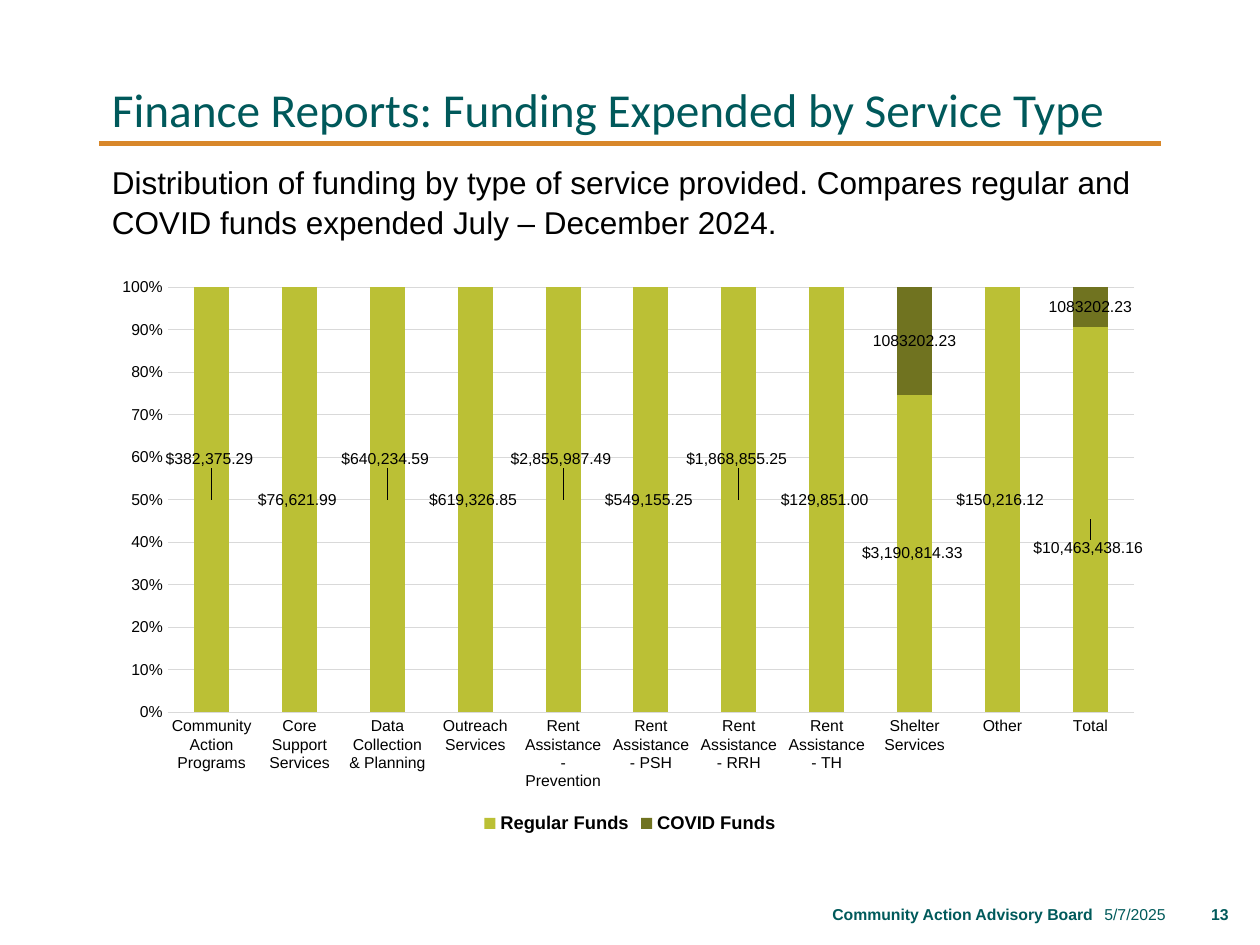
from lxml import etree
from pptx import Presentation
from pptx.chart.data import CategoryChartData
from pptx.dml.color import RGBColor
from pptx.enum.chart import XL_CHART_TYPE, XL_LABEL_POSITION, XL_LEGEND_POSITION, XL_TICK_MARK
from pptx.enum.shapes import MSO_CONNECTOR
from pptx.enum.text import MSO_ANCHOR, MSO_AUTO_SIZE, PP_ALIGN
from pptx.oxml import parse_xml
from pptx.oxml.ns import nsdecls, qn
from pptx.util import Cm, Pt

STACKED_100 = XL_CHART_TYPE.COLUMN_STACKED_100
CENTER_LABEL = XL_LABEL_POSITION.CENTER
LEGEND_BOTTOM = XL_LEGEND_POSITION.BOTTOM
NO_TICK = XL_TICK_MARK.NONE
STRAIGHT = MSO_CONNECTOR.STRAIGHT
TOP, MIDDLE, BOTTOM = MSO_ANCHOR.TOP, MSO_ANCHOR.MIDDLE, MSO_ANCHOR.BOTTOM
LEFT, RIGHT = PP_ALIGN.LEFT, PP_ALIGN.RIGHT
NO_AUTOFIT = MSO_AUTO_SIZE.NONE

COLORS = {
    "title": "00595B",
    "footer": "005A5B",
    "rule": "D8872A",
    "text": "000000",
    "grid": "D9D9D9",
    "regular": "BBC035",
    "covid": "707320",
}
DOLLARS = '"$"#,##0.00_);[Red]\\("$"#,##0.00\\)'


def style_font(font, size, color, bold=False, name="Arial"):
    font.name = name
    font.size = Pt(size)
    font.bold = bold
    font.color.rgb = RGBColor.from_string(COLORS[color])


def fill_text(box, place, text, anchor, align):
    box.left, box.top, box.width, box.height = [Cm(length) for length in place]
    frame = box.text_frame
    frame.text = text
    frame.word_wrap = True
    frame.auto_size = NO_AUTOFIT
    frame.vertical_anchor = anchor
    paragraph = frame.paragraphs[0]
    paragraph.alignment = align
    return paragraph


prs = Presentation()
prs.slide_width, prs.slide_height = Cm(25.4), Cm(19.05)
slide = prs.slides.add_slide(prs.slide_layouts[1])

rule = slide.shapes.add_connector(STRAIGHT, Cm(2), Cm(2.9), Cm(23.4), Cm(2.9))
rule.line.color.rgb = RGBColor.from_string(COLORS["rule"])
rule.line.width = Pt(3)
etree.SubElement(rule._element.spPr, qn("a:effectLst"))

heading = fill_text(slide.shapes.title, (2, 1.02, 21.4, 1.88),
                    "Finance Reports: Funding Expended by Service Type", BOTTOM, LEFT)
heading.line_spacing = 0.9
style_font(heading.runs[0].font, 27, "title", name="Calibri")

summary = fill_text(
    slide.placeholders[1], (2, 3.12, 21.4, 3.4),
    "Distribution of funding by type of service provided. "
    "Compares regular and COVID funds expended July – December 2024.", TOP, LEFT)
summary_props = summary._p.get_or_add_pPr()
summary_props.set("marL", "0")
summary_props.set("indent", "0")
etree.SubElement(summary_props, qn("a:buNone"))
summary.line_spacing = 1.05
summary.space_before = Pt(0)
summary.space_after = Pt(10)
style_font(summary.runs[0].font, 18, "text")

for left, width, text, bold in [
    (21.74, 2.01, "5/7/2025", False),
    (6.35, 15.93, "Community Action Advisory Board", True),
    (23.83, 1.19, "13", True),
]:
    place = (left, 17.93, width, 1.02)
    footer_box = slide.shapes.add_textbox(*[Cm(length) for length in place])
    footer = fill_text(footer_box, place, text, MIDDLE, RIGHT)
    style_font(footer.runs[0].font, 9, "footer", bold)

funding = CategoryChartData()
funding.categories = [
    "Community Action Programs", "Core Support Services", "Data Collection & Planning",
    "Outreach Services", "Rent Assistance - Prevention", "Rent Assistance - PSH",
    "Rent Assistance - RRH", "Rent Assistance - TH", "Shelter Services", "Other", "Total",
]
funding.add_series("Regular Funds", [
    382375.29, 76621.99, 640234.59, 619326.85, 2855987.49, 549155.25,
    1868855.25, 129851, 3190814.33, 150216.12, 10463438.16,
], DOLLARS)
funding.add_series("COVID Funds", [None] * 8 + [1083202.23, None, 1083202.23], "General")

chart = slide.shapes.add_chart(
    STACKED_100, Cm(2.11), Cm(5.33), Cm(21.18), Cm(11.58), funding).chart
style_font(chart.font, 10, "text")
chart.has_title = False
chart.has_legend = True
chart.legend.position = LEGEND_BOTTOM
chart.legend.include_in_layout = False
style_font(chart.legend.font, 10.5, "text", True)

for axis in (chart.category_axis, chart.value_axis):
    axis.major_tick_mark = axis.minor_tick_mark = NO_TICK
    style_font(axis.tick_labels.font, 9, "text")
chart.value_axis.tick_labels.number_format = "0%"
chart.value_axis.tick_labels.number_format_is_linked = False
chart.value_axis.maximum_scale = 1
chart.value_axis.major_unit = 0.1
chart.value_axis.format.line.fill.background()
for line in (chart.category_axis.format.line, chart.value_axis.major_gridlines.format.line):
    line.color.rgb = RGBColor.from_string(COLORS["grid"])
    line.width = Pt(0.75)

plot = chart.plots[0]
plot.gap_width, plot.overlap = 150, 100
plot.vary_by_categories = False
for series, color, number_format in zip(plot.series, ("regular", "covid"), (DOLLARS, "General")):
    series.format.fill.solid()
    series.format.fill.fore_color.rgb = RGBColor.from_string(COLORS[color])
    series.data_labels.show_value = True
    series.data_labels.position = CENTER_LABEL
    series.data_labels.number_format = number_format
    series.data_labels.number_format_is_linked = False
    style_font(series.data_labels.font, 9, "text")

regular = plot.series[0]
label_shifts = {0: -0.07, 2: -0.07, 4: -0.07, 6: -0.07, 10: 0.05}
for index, shift in label_shifts.items():
    label = regular.points[index].data_label
    label.position = CENTER_LABEL
    style_font(label.font, 9, "text")
    label_xml = regular._element.xpath(f'c:dLbls/c:dLbl[c:idx/@val="{index}"]')[0]
    label_xml.insert(1, parse_xml(
        f'<c:layout {nsdecls("c")}><c:manualLayout><c:x val="0"/>'
        f'<c:y val="{shift}"/></c:manualLayout></c:layout>'))
    number_xml = etree.Element(qn("c:numFmt"), formatCode=DOLLARS, sourceLinked="0")
    label_xml.insert(2, number_xml)

plot_area = chart._chartSpace.chart.plotArea
for old_layout in plot_area.findall(qn("c:layout")):
    plot_area.remove(old_layout)
plot_area.insert(0, parse_xml(
    f'<c:layout {nsdecls("c")}><c:manualLayout><c:layoutTarget val="inner"/>'
    '<c:xMode val="edge"/><c:yMode val="edge"/><c:x val="0.06"/><c:y val="0.04"/>'
    '<c:w val="0.92"/><c:h val="0.74"/></c:manualLayout></c:layout>'))

prs.save("out.pptx")
